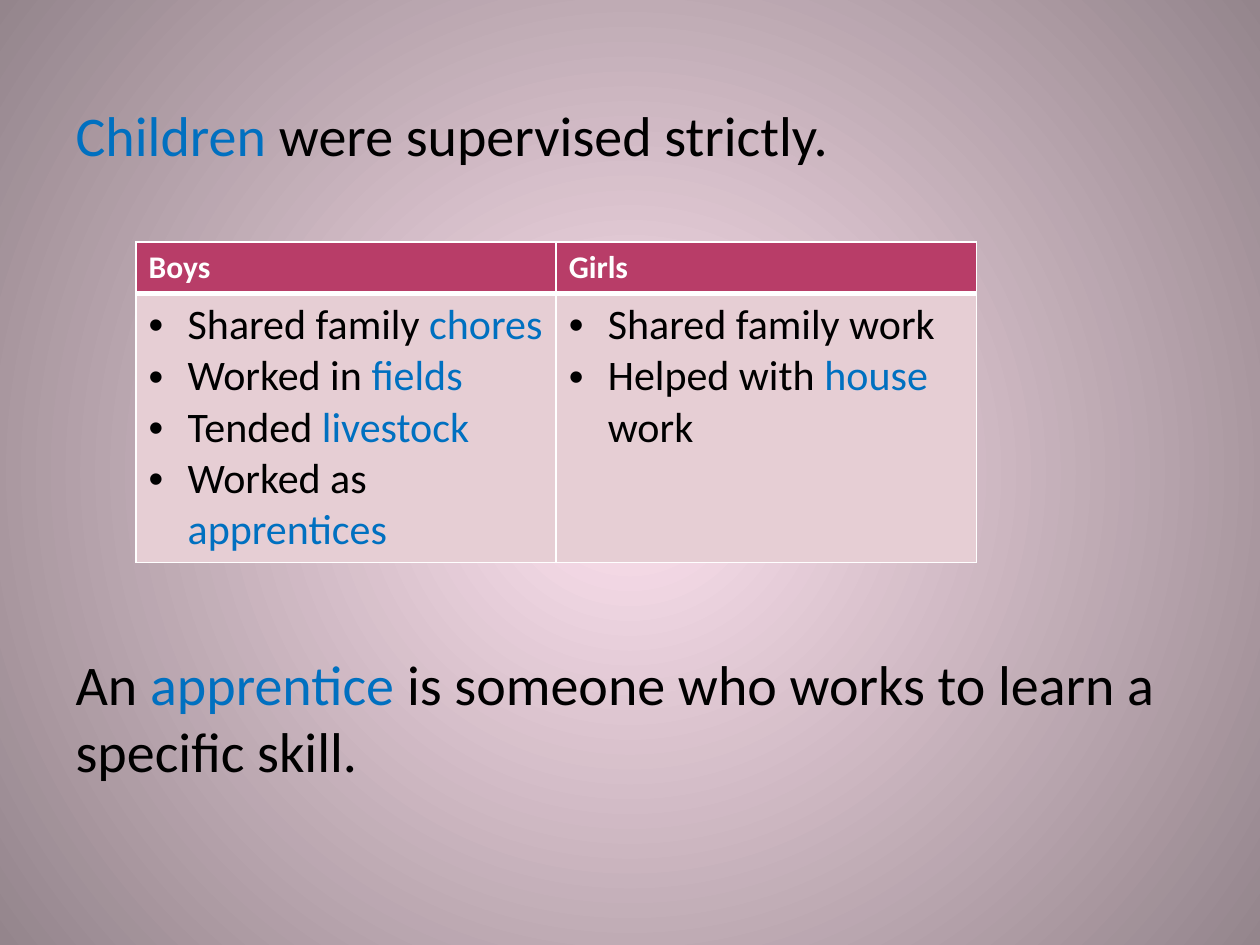
from lxml.etree import SubElement
from pptx import Presentation
from pptx.dml.color import RGBColor
from pptx.enum.text import MSO_ANCHOR, MSO_AUTO_SIZE
from pptx.oxml.ns import qn
from pptx.util import Inches, Pt

COLORS = {
    "center": "FFE3F0",
    "edge": "94858C",
    "text": "000000",
    "keyword": "0070C0",
    "white": "FFFFFF",
    "header": "B83D68",
    "cell": "E6CED4",
}
FONT = "Calibri"
STATEMENTS = [
    "|Children| were supervised strictly.",
    "An |apprentice| is someone who works to learn a specific skill.",
]
DUTIES = {
    "Boys": [
        "Shared family |chores|",
        "Worked in |fields|",
        "Tended |livestock|",
        "Worked as |apprentices|",
    ],
    "Girls": ["Shared family work", "Helped with |house| work"],
}


def color(name):
    return RGBColor.from_string(COLORS[name])


def write_spans(para, marked_text, size, base="text", bold=False):
    for index, piece in enumerate(marked_text.split("|")):
        if not piece:
            continue
        span = para.add_run()
        span.text = piece
        span.font.name = FONT
        span.font.size = Pt(size)
        span.font.bold = bold
        span.font.color.rgb = color("keyword" if index % 2 else base)


def set_bullet(para, indent, character=None):
    properties = para._p.get_or_add_pPr()
    properties.set("marL", str(indent))
    properties.set("indent", str(-indent))
    if character:
        SubElement(properties, qn("a:buFont"), typeface="Arial")
        SubElement(properties, qn("a:buChar"), char=character)
    else:
        SubElement(properties, qn("a:buNone"))


def set_borders(cell, bottom_width):
    properties = cell._tc.get_or_add_tcPr()
    widths = {"a:lnL": 1, "a:lnR": 1, "a:lnT": 1, "a:lnB": bottom_width}
    for side, width in widths.items():
        line = SubElement(properties, qn(side), w=str(Pt(width)))
        fill = SubElement(line, qn("a:solidFill"))
        SubElement(fill, qn("a:srgbClr"), val=COLORS["white"])


def fill_cell(cell, fill_name, bottom_width):
    set_borders(cell, bottom_width)
    cell.fill.solid()
    cell.fill.fore_color.rgb = color(fill_name)


def paint_background(page):
    fill = page.background.fill
    fill.gradient()
    for stop, name in zip(fill.gradient_stops, ("center", "edge")):
        stop.color.rgb = color(name)
    gradient = page.element.find(".//" + qn("a:gradFill"))
    gradient.remove(gradient.find(qn("a:lin")))
    path = SubElement(gradient, qn("a:path"), path="circle")
    SubElement(path, qn("a:fillToRect"), l="50000", t="50000", r="50000", b="50000")


def place_statements(page, left, top, width, height):
    body = page.placeholders[1]
    body.left, body.top, body.width, body.height = left, top, width, height
    frame = body.text_frame
    frame.auto_size = MSO_AUTO_SIZE.NONE
    frame.vertical_anchor = MSO_ANCHOR.TOP
    for index, statement in enumerate(STATEMENTS):
        para = frame.add_paragraph() if index else frame.paragraphs[0]
        para.space_before = Pt(275 if index else 0)
        set_bullet(para, 0)
        write_spans(para, statement, 32)


def place_duties(page, left, top, width, height):
    table = page.shapes.add_table(2, len(DUTIES), left, top, width, height).table
    table.rows[0].height = Inches(0.41)
    table.rows[1].height = height - table.rows[0].height
    for column, (group, duties) in enumerate(DUTIES.items()):
        header, cell = table.cell(0, column), table.cell(1, column)
        fill_cell(header, "header", 3)
        write_spans(header.text_frame.paragraphs[0], group, 18, "white", True)
        fill_cell(cell, "cell", 1)
        frame = cell.text_frame
        for index, duty in enumerate(duties):
            para = frame.add_paragraph() if index else frame.paragraphs[0]
            set_bullet(para, Inches(0.31), "•")
            write_spans(para, duty, 24)
        set_top = cell._tc.tcPr.find(qn("a:lnT"))
        set_top.set("w", str(Pt(3)))


def main():
    deck = Presentation()
    deck.slide_width, deck.slide_height = Inches(10), Inches(7.5)
    page = deck.slides.add_slide(deck.slide_layouts[1])
    title = page.shapes.title.element
    title.getparent().remove(title)
    paint_background(page)
    place_statements(page, Inches(0.5), Inches(0.75), Inches(9), Inches(5.95))
    place_duties(page, Inches(1.08), Inches(1.92), Inches(6.67), Inches(2.54))
    deck.save("out.pptx")


if __name__ == "__main__":
    main()
